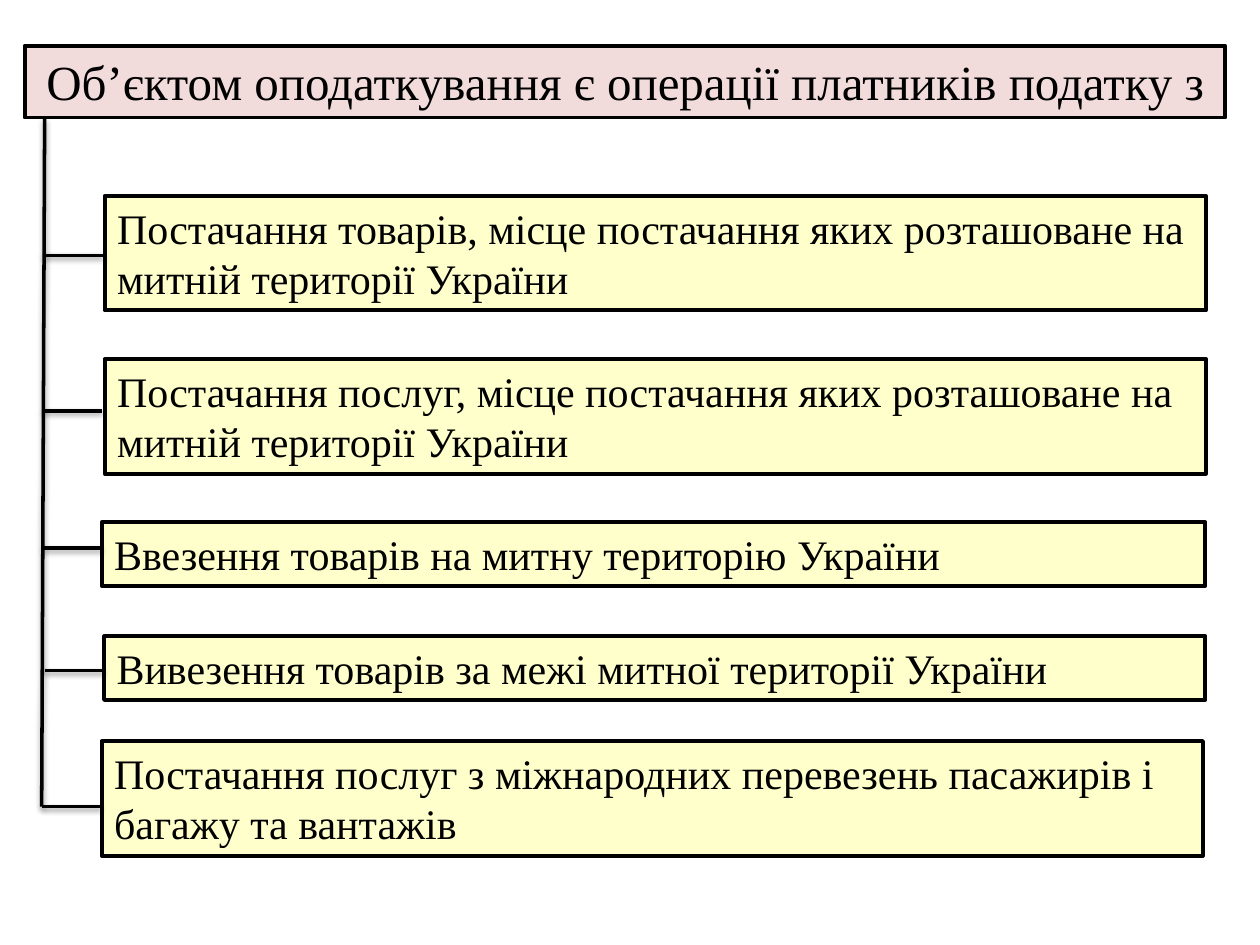
from dataclasses import dataclass

import pptx
import pptx.dml.color
import pptx.enum.shapes
import pptx.enum.text
import pptx.util
from pptx.slide import Slide
from pptx.util import Cm

COLORS = {"title": "F2DCDB", "item": "FFFFCC", "ink": "000000"}
FONT = "Times New Roman"
ALIGN = pptx.enum.text.PP_ALIGN


@dataclass(frozen=True)
class Box:
    text: str
    left: float
    top: float
    width: float
    height: float
    fill: str = "item"
    size: int = 24
    align: ALIGN = ALIGN.LEFT


@dataclass(frozen=True)
class Line:
    start_x: float
    start_y: float
    end_x: float
    end_y: float


ONE_LINE, TWO_LINES = 1.28, 2.31

TITLE = Box("Об’єктом оподаткування є операції платників податку з",
            0.5, 0.92, 24.2, 1.45, "title", 28, ALIGN.CENTER)

ITEMS = [
    Box("Постачання товарів, місце постачання яких розташоване на митній території України",
        2.11, 3.95, 22.2, TWO_LINES),
    Box("Постачання послуг, місце постачання яких розташоване на митній території України",
        2.11, 7.24, 22.2, TWO_LINES),
    Box("Ввезення товарів на митну територію України", 2.05, 10.53, 22.25, ONE_LINE),
    Box("Вивезення товарів за межі митної території України", 2.1, 12.83, 22.2, ONE_LINE),
    Box("Постачання послуг з міжнародних перевезень пасажирів і багажу та вантажів",
        2.05, 14.94, 22.2, TWO_LINES),
]

TRUNK = Line(0.9, 2.38, 0.84, 16.26)
BRANCHES = [
    Line(0.87, 5.15, 2.08, 5.15),
    Line(0.87, 8.28, 2.06, 8.28),
    Line(0.87, 11.05, 2.06, 11.05),
    Line(0.9, 13.52, 2.1, 13.52),
    Line(0.84, 16.26, 2.04, 16.26),
]


def color(name: str) -> pptx.dml.color.RGBColor:
    return pptx.dml.color.RGBColor.from_string(COLORS[name])


def draw_box(slide: Slide, box: Box) -> None:
    shape = slide.shapes.add_textbox(
        Cm(box.left), Cm(box.top), Cm(box.width), Cm(box.height))
    shape.fill.solid()
    shape.fill.fore_color.rgb = color(box.fill)
    shape.line.color.rgb = color("ink")
    shape.line.width = pptx.util.Pt(2.25)
    frame = shape.text_frame
    frame.word_wrap = True
    frame.auto_size = pptx.enum.text.MSO_AUTO_SIZE.SHAPE_TO_FIT_TEXT
    paragraph = frame.paragraphs[0]
    paragraph.alignment = box.align
    run = paragraph.add_run()
    run.text = box.text
    run.font.name = FONT
    run.font.size = pptx.util.Pt(box.size)
    run.font.color.rgb = color("ink")


def draw_line(slide: Slide, line: Line) -> None:
    connector = slide.shapes.add_connector(
        pptx.enum.shapes.MSO_CONNECTOR.STRAIGHT,
        Cm(line.start_x), Cm(line.start_y), Cm(line.end_x), Cm(line.end_y))
    connector.line.color.rgb = color("ink")
    connector.line.width = pptx.util.Pt(2)


def main() -> None:
    presentation = pptx.Presentation()
    presentation.slide_width = Cm(25.4)
    presentation.slide_height = Cm(19.05)
    slide = presentation.slides.add_slide(presentation.slide_layouts[6])
    for box in [TITLE, *ITEMS]:
        draw_box(slide, box)
    for line in [TRUNK, *BRANCHES]:
        draw_line(slide, line)
    presentation.save("out.pptx")


if __name__ == "__main__":
    main()
